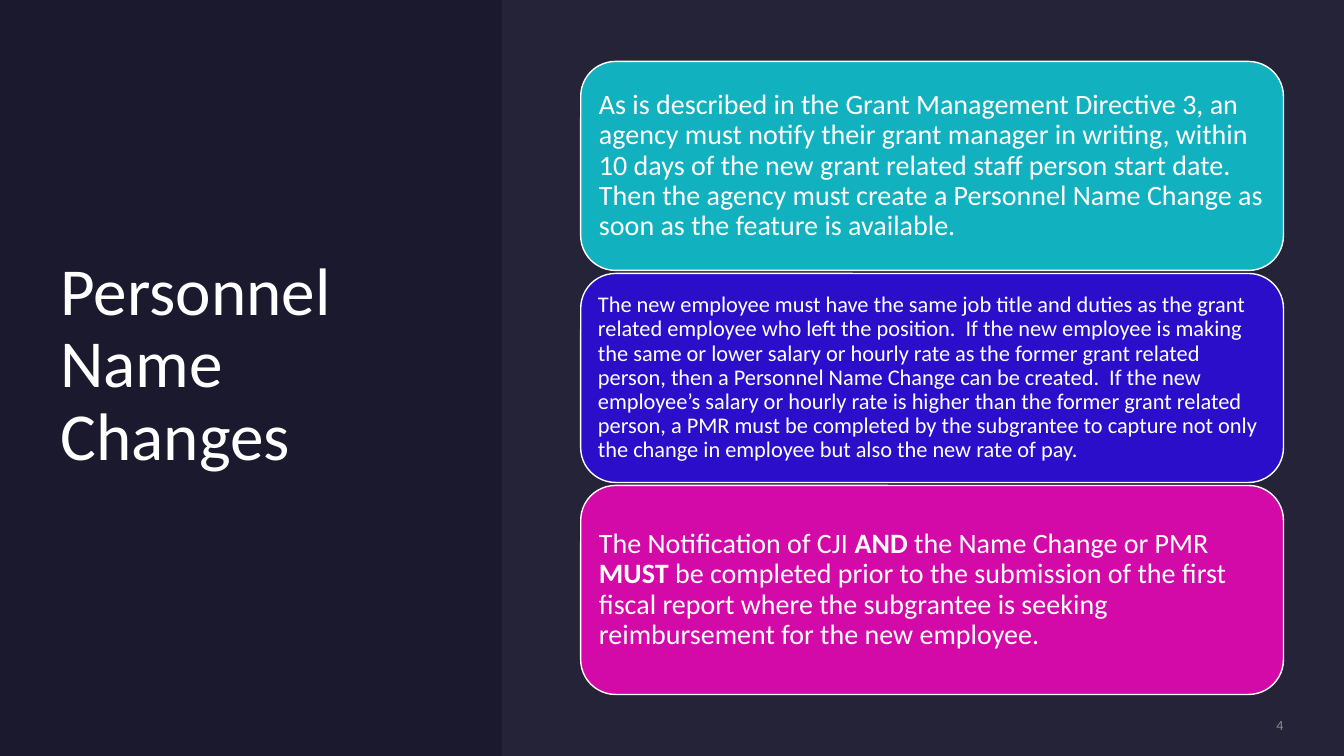
import pptx
import pptx.util
import pptx.dml.color
import pptx.enum.shapes
import pptx.enum.text
import pptx.oxml

Inches = pptx.util.Inches
RGBColor = pptx.dml.color.RGBColor
Shape = pptx.enum.shapes.MSO_SHAPE
Align = pptx.enum.text.PP_ALIGN

NAVY = RGBColor(0x1B, 0x19, 0x2E)
WHITE = RGBColor(0xFF, 0xFF, 0xFF)
PALE = RGBColor(0xE4, 0xE3, 0xF0)
GREY = RGBColor(0xA6, 0xA6, 0xA6)
TEAL = RGBColor(0x12, 0xB1, 0xBF)
BLUE = RGBColor(0x2A, 0x0E, 0xC9)
PINK = RGBColor(0xD4, 0x0A, 0xA8)
FONT = "Calibri"

# Each card: fill, text size, inset, runs (every second run is bold)
CARDS = [
    (TEAL, 20, 0.08, [
        "As is described in the Grant Management Directive 3, an agency must "
        "notify their grant manager in writing, within 10 days of the new grant "
        "related staff person start date. Then the agency must create a "
        "Personnel Name Change as soon as the feature is available."]),
    (BLUE, 16, 0.07, [
        "The new employee must have the same job title and duties as the grant "
        "related employee who left the position.  If the new employee is making "
        "the same or lower salary or hourly rate as the former grant related "
        "person, then a Personnel Name Change can be created.  If the new "
        "employee’s salary or hourly rate is higher than the former grant "
        "related person, a PMR must be completed by the subgrantee to capture "
        "not only the change in employee but also the new rate of pay."]),
    (PINK, 20, 0.08, [
        "The Notification of CJI ", "AND", " the Name Change or PMR ", "MUST",
        " be completed prior to the submission of the first fiscal report where "
        "the subgrantee is seeking reimbursement for the new employee."]),
]


def fade(part, share):
    """Give the solid colour inside an XML part an opacity in percent."""
    color = part.xpath(".//a:solidFill/a:srgbClr")[0]
    alpha = pptx.oxml.parse_xml(
        '<a:alpha xmlns:a="http://schemas.openxmlformats.org/drawingml/2006/main"'
        f' val="{share * 1000}"/>')
    color.append(alpha)


def write(shape, runs, size, color=WHITE, inset=0, align=Align.LEFT):
    frame = shape.text_frame
    frame.word_wrap = True
    frame.vertical_anchor = pptx.enum.text.MSO_ANCHOR.MIDDLE
    frame.margin_left = frame.margin_right = Inches(inset)
    frame.margin_top = frame.margin_bottom = Inches(inset)
    para = frame.paragraphs[0]
    para.alignment = align
    para.line_spacing = 0.9
    for index, words in enumerate(runs):
        run = para.add_run()
        run.text = words
        run.font.name = FONT
        run.font.size = pptx.util.Pt(size)
        run.font.bold = index % 2 == 1
        run.font.color.rgb = color


def add_box(slide, kind, box, fill):
    shape = slide.shapes.add_shape(kind, *map(Inches, box))
    shape.shadow.inherit = False
    shape.fill.solid()
    shape.fill.fore_color.rgb = fill
    shape.line.fill.background()
    return shape


def add_title(slide, box):
    title = slide.shapes.add_textbox(*map(Inches, box))
    write(title, ["Personnel Name Changes"], 48)


def add_panel(slide, box):
    panel = add_box(slide, Shape.RECTANGLE, box, PALE)
    fade(panel.fill._xPr, 5)


def add_cards(slide, box, gap=0.03):
    left, top, width, height = box
    tall = (height - gap * (len(CARDS) - 1)) / len(CARDS)
    for index, (fill, size, inset, runs) in enumerate(CARDS):
        place = (left, top + index * (tall + gap), width, tall)
        card = add_box(slide, Shape.ROUNDED_RECTANGLE, place, fill)
        card.line.color.rgb = WHITE
        card.line.width = pptx.util.Pt(1)
        write(card, runs, size, inset=inset)


def add_number(slide, box):
    number = slide.shapes.add_textbox(*map(Inches, box))
    write(number, ["4"], 10, GREY, align=Align.RIGHT)
    fade(number.text_frame._txBody, 80)


def main():
    deck = pptx.Presentation()
    deck.slide_width = Inches(13.33)
    deck.slide_height = Inches(7.5)
    slide = deck.slides.add_slide(deck.slide_layouts[6])
    slide.background.fill.solid()
    slide.background.fill.fore_color.rgb = NAVY

    # Left side: title
    add_title(slide, (0.6, 0.6, 3.9, 6.06))
    # Right side: tinted panel, page number and cards
    add_panel(slide, (4.98, 0, 8.35, 7.5))
    add_number(slide, (10.88, 7.12, 1.85, 0.17))
    add_cards(slide, (5.76, 0.61, 6.97, 6.28))
    deck.save("out.pptx")


if __name__ == "__main__":
    main()
